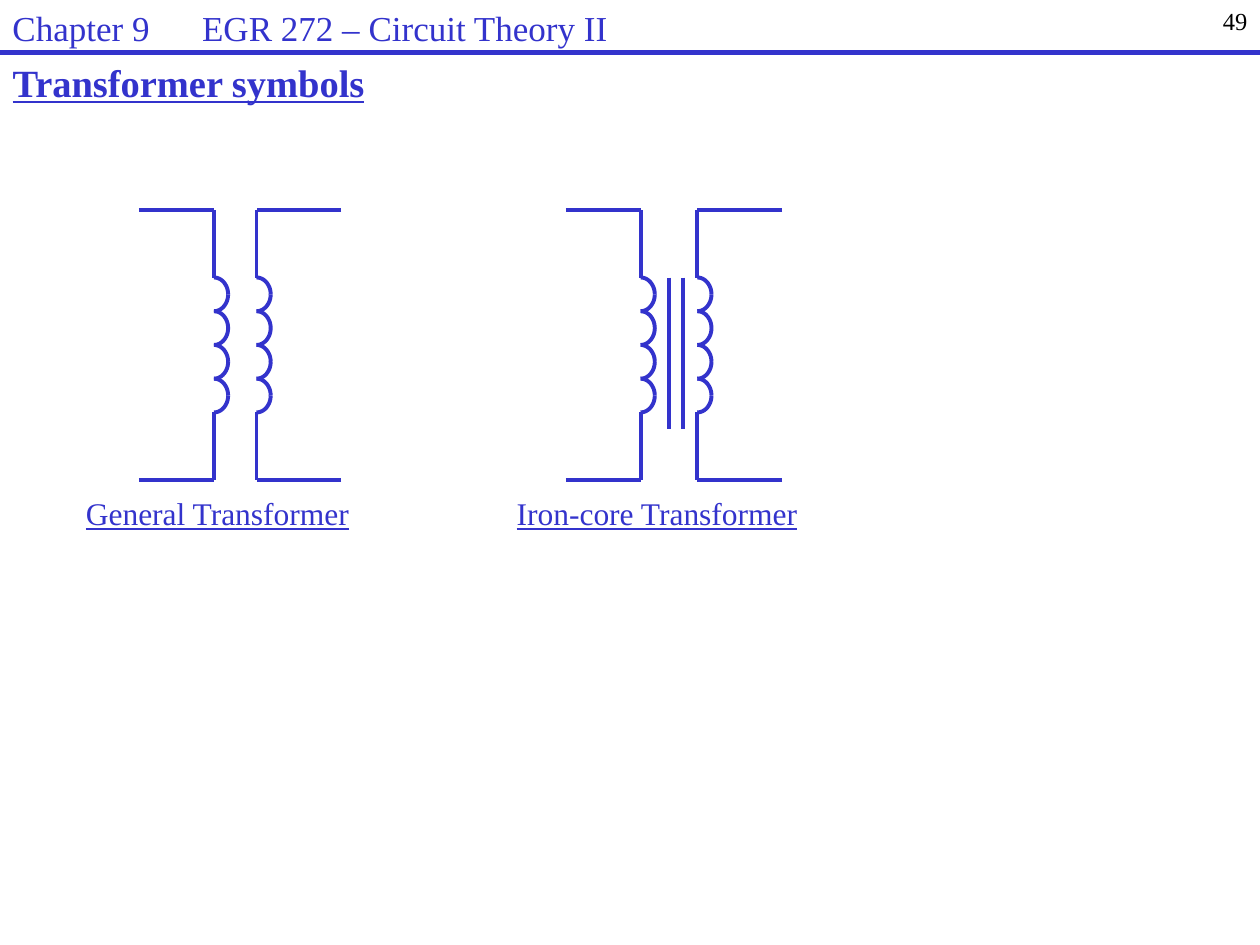
from dataclasses import dataclass
from math import cos, pi, sin

from pptx import Presentation
from pptx.dml.color import RGBColor
from pptx.enum.shapes import MSO_CONNECTOR
from pptx.enum.text import MSO_ANCHOR, MSO_AUTO_SIZE, PP_ALIGN
from pptx.oxml import parse_xml
from pptx.oxml.ns import nsdecls
from pptx.util import Pt

STRAIGHT = MSO_CONNECTOR.STRAIGHT
TOP = MSO_ANCHOR.TOP
NO_FIT = MSO_AUTO_SIZE.NONE
LEFT, RIGHT = PP_ALIGN.LEFT, PP_ALIGN.RIGHT


@dataclass(frozen=True)
class Theme:
    font: str = "Times New Roman"
    blue: RGBColor = RGBColor(0x33, 0x33, 0xCC)
    black: RGBColor = RGBColor(0, 0, 0)
    title: float = 22
    header: float = 20
    caption: float = 18
    number: float = 14
    wire: float = 2.25
    rule: float = 3


class SlideBuilder:
    def __init__(self, slide, theme):
        self.slide = slide
        self.theme = theme
        self.shapes = slide.shapes

    def start_group(self):
        self.shapes = self.slide.shapes.add_group_shape().shapes

    def end_group(self):
        self.shapes = self.slide.shapes

    def fill_text(self, sp, text, size, color, align=LEFT, bold=False, underline=False):
        tf = sp.text_frame
        tf.word_wrap = True
        tf.auto_size = NO_FIT
        tf.vertical_anchor = TOP
        p = tf.paragraphs[0]
        p.alignment = align
        r = p.add_run()
        r.text = text
        r.font.name = self.theme.font
        r.font.size = Pt(size)
        r.font.color.rgb = color
        r.font.bold = bold
        r.font.underline = underline
        return p

    def title(self, text, x, y, w, h):
        sp = self.slide.shapes.title
        sp.left, sp.top, sp.width, sp.height = Pt(x), Pt(y), Pt(w), Pt(h)
        self.fill_text(sp, text, self.theme.title, self.theme.blue, bold=True, underline=True)

    def text(self, text, x, y, w, h, size, color, **style):
        sp = self.shapes.add_textbox(Pt(x), Pt(y), Pt(w), Pt(h))
        return self.fill_text(sp, text, size, color, **style)

    def tab_stop(self, p, position):
        tabs = parse_xml(
            f'<a:tabLst {nsdecls("a")}><a:tab pos="{Pt(position)}" algn="l"/></a:tabLst>'
        )
        p._p.get_or_add_pPr().append(tabs)

    def line(self, x1, y1, x2, y2, width):
        c = self.shapes.add_connector(STRAIGHT, Pt(x1), Pt(y1), Pt(x2), Pt(y2))
        c.line.color.rgb = self.theme.blue
        c.line.width = Pt(width)
        c._element.spPr.append(parse_xml(f'<a:effectLst {nsdecls("a")}/>'))

    def quarter_arc(self, x, y, rx, ry, start, steps=12):
        angles = [start + pi / 2 * i / steps for i in range(steps + 1)]
        points = [(Pt(x + rx * cos(a)), Pt(y + ry * sin(a))) for a in angles]
        fb = self.shapes.build_freeform(*points[0])
        fb.add_line_segments(points[1:], close=False)
        sp = fb.convert_to_shape()
        sp.fill.background()
        sp.line.color.rgb = self.theme.blue
        sp.line.width = Pt(self.theme.wire)
        sp.shadow.inherit = False

    def winding(self, x, terminal):
        wire = self.theme.wire
        for y, coil_end in ((WIRE_TOP, COIL_TOP), (WIRE_BOTTOM, COIL_BOTTOM)):
            self.line(terminal, y, x, y, wire)
            self.line(x, coil_end, x, y, wire)
        ry = (COIL_BOTTOM - COIL_TOP) / (2 * LOOPS)
        for loop in range(LOOPS):
            center = COIL_TOP + (2 * loop + 1) * ry
            for start in (-pi / 2, 0):
                self.quarter_arc(x, center, LOOP_RADIUS, ry, start)

    def transformer(self, caption, caption_x, left, primary, secondary, right, core=()):
        self.start_group()
        self.winding(primary, left)
        self.winding(secondary, right)
        for x in core:
            self.line(x, COIL_TOP, x, CORE_BOTTOM, self.theme.wire)
        self.text(caption, caption_x, 278.6, 227.5, 39, self.theme.caption,
                  self.theme.blue, underline=True)
        self.end_group()


WIRE_TOP, WIRE_BOTTOM = 120, 274.3
COIL_TOP, COIL_BOTTOM = 158.6, 235.7
CORE_BOTTOM = 245.4
LOOPS = 4
LOOP_RADIUS = 8.1
WIDTH, HEIGHT = 720, 540
HEADER_Y = 30


def main():
    prs = Presentation()
    prs.slide_width, prs.slide_height = Pt(WIDTH), Pt(HEIGHT)
    theme = Theme()
    s = SlideBuilder(prs.slides.add_slide(prs.slide_layouts[5]), theme)

    s.title("Transformer symbols", 0, HEADER_Y, 276, 30)
    s.transformer("General Transformer", 42, 79.4, 122.3, 146.6, 195)
    s.transformer("Iron-core Transformer", 288.2, 323.4, 366.1, 398.5, 446.9,
                  core=(382.3, 390.3))
    s.text("49", 570, 0, 150, 30, theme.number, theme.black, align=RIGHT)
    s.line(0, HEADER_Y, WIDTH, HEADER_Y, theme.rule)
    p = s.text("Chapter 9\tEGR 272 – Circuit Theory II", 0, 0, 528, 24,
               theme.header, theme.blue)
    s.tab_stop(p, 108.4)

    prs.save("out.pptx")


if __name__ == "__main__":
    main()
